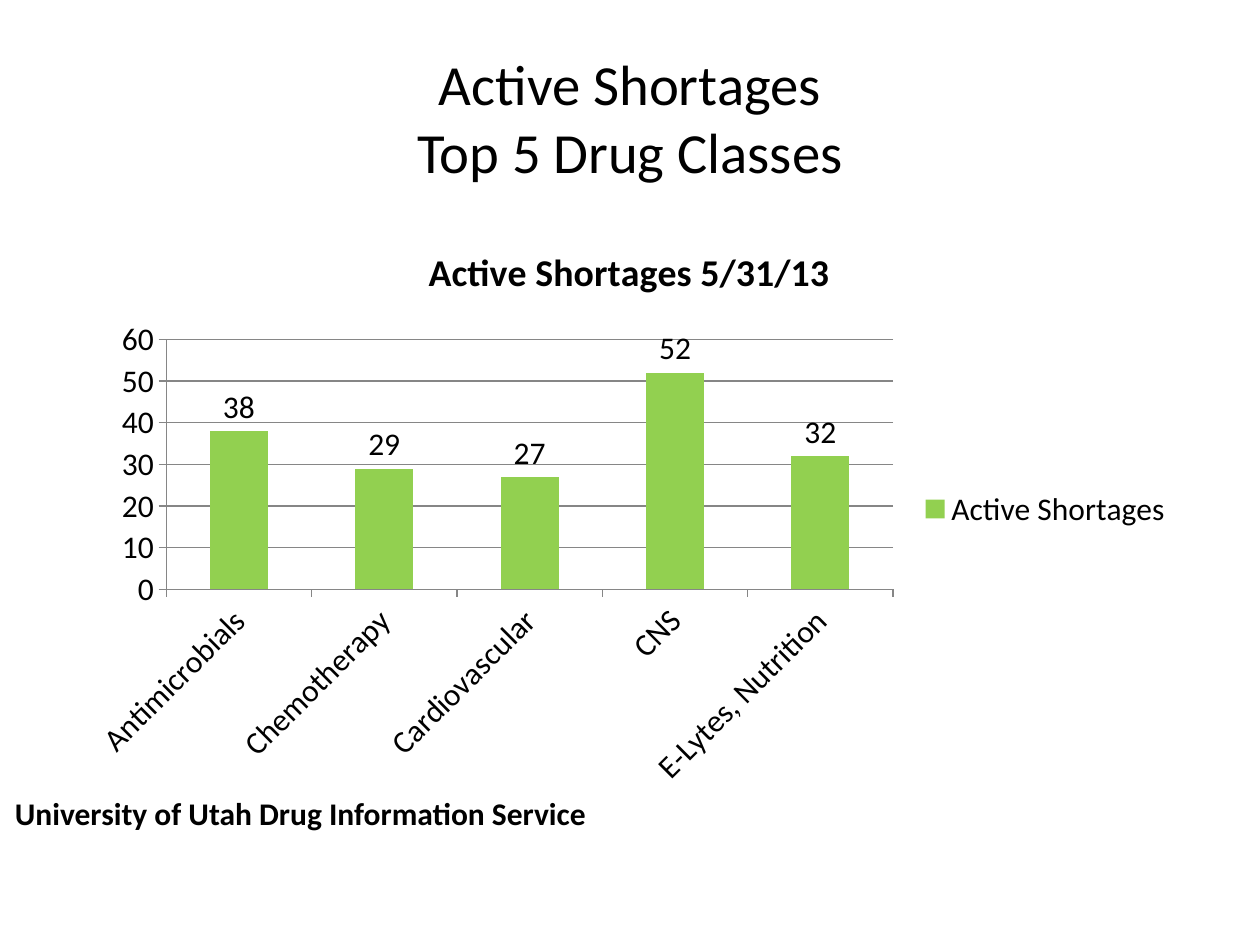
from pptx import Presentation
from pptx import util as u
from pptx.chart.data import CategoryChartData
from pptx.dml.color import RGBColor
from pptx.enum import chart as c, text as t

# Content
TITLE_LINES = ["Active Shortages", "Top 5 Drug Classes"]
CHART_TITLE = "Active Shortages 5/31/13"
SERIES_NAME = "Active Shortages"
SHORTAGES = {
    "Antimicrobials": 38,
    "Chemotherapy": 29,
    "Cardiovascular": 27,
    "CNS": 52,
    "E-Lytes, Nutrition": 32,
}
SOURCE = "University of Utah Drug Information Service"

FONT = "Calibri"
BLACK = RGBColor(0x00, 0x00, 0x00)
GREEN = RGBColor(0x92, 0xD0, 0x50)
GRAY = RGBColor(0x86, 0x86, 0x86)


def set_font(font, size, bold=False):
    font.name = FONT
    font.size = u.Pt(size)
    font.bold = bold
    font.color.rgb = BLACK


def add_text(slide, box, lines, size, bold=False,
             align=t.PP_ALIGN.LEFT, anchor=t.MSO_ANCHOR.TOP):
    shape = slide.shapes.add_textbox(*map(u.Inches, box))
    frame = shape.text_frame
    frame.word_wrap = True
    frame.vertical_anchor = anchor
    paragraph = frame.paragraphs[0]
    paragraph.alignment = align
    for index, line in enumerate(lines):
        if index:
            paragraph.add_line_break()
        run = paragraph.add_run()
        run.text = line
        set_font(run.font, size, bold)


def add_shortage_chart(slide, box):
    data = CategoryChartData()
    data.categories = list(SHORTAGES)
    data.add_series(SERIES_NAME, list(SHORTAGES.values()))
    chart = slide.shapes.add_chart(
        c.XL_CHART_TYPE.COLUMN_CLUSTERED, *map(u.Inches, box), data).chart
    set_font(chart.font, 18)

    # Title and legend
    chart.has_title = True
    run = chart.chart_title.text_frame.paragraphs[0].add_run()
    run.text = CHART_TITLE
    set_font(run.font, 21.6, bold=True)
    chart.chart_title.include_in_layout = False
    chart.has_legend = True
    chart.legend.position = c.XL_LEGEND_POSITION.RIGHT
    chart.legend.include_in_layout = False

    # Axes
    for axis in (chart.category_axis, chart.value_axis):
        axis.major_tick_mark = c.XL_TICK_MARK.OUTSIDE
        axis.minor_tick_mark = c.XL_TICK_MARK.NONE
        axis.format.line.color.rgb = GRAY
    chart.value_axis.has_major_gridlines = True
    chart.value_axis.major_gridlines.format.line.color.rgb = GRAY

    # Columns and their values
    plot = chart.plots[0]
    plot.gap_width = 150
    plot.vary_by_categories = False
    fill = plot.series[0].format.fill
    fill.solid()
    fill.fore_color.rgb = GREEN
    plot.has_data_labels = True
    labels = plot.data_labels
    labels.show_value = True
    labels.position = c.XL_LABEL_POSITION.OUTSIDE_END
    set_font(labels.font, 18)


def main():
    presentation = Presentation()
    presentation.slide_width = u.Inches(10)
    presentation.slide_height = u.Inches(7.5)
    slide = presentation.slides.add_slide(presentation.slide_layouts[6])

    add_text(slide, (0.5, 0.3, 9, 1.25), TITLE_LINES, 32.4,
             align=t.PP_ALIGN.CENTER, anchor=t.MSO_ANCHOR.MIDDLE)
    add_shortage_chart(slide, (0.58, 1.75, 8.83, 4.58))
    add_text(slide, (0.02, 6.25, 6.48, 0.4), [SOURCE], 18, bold=True)

    presentation.save("out.pptx")


if __name__ == "__main__":
    main()
